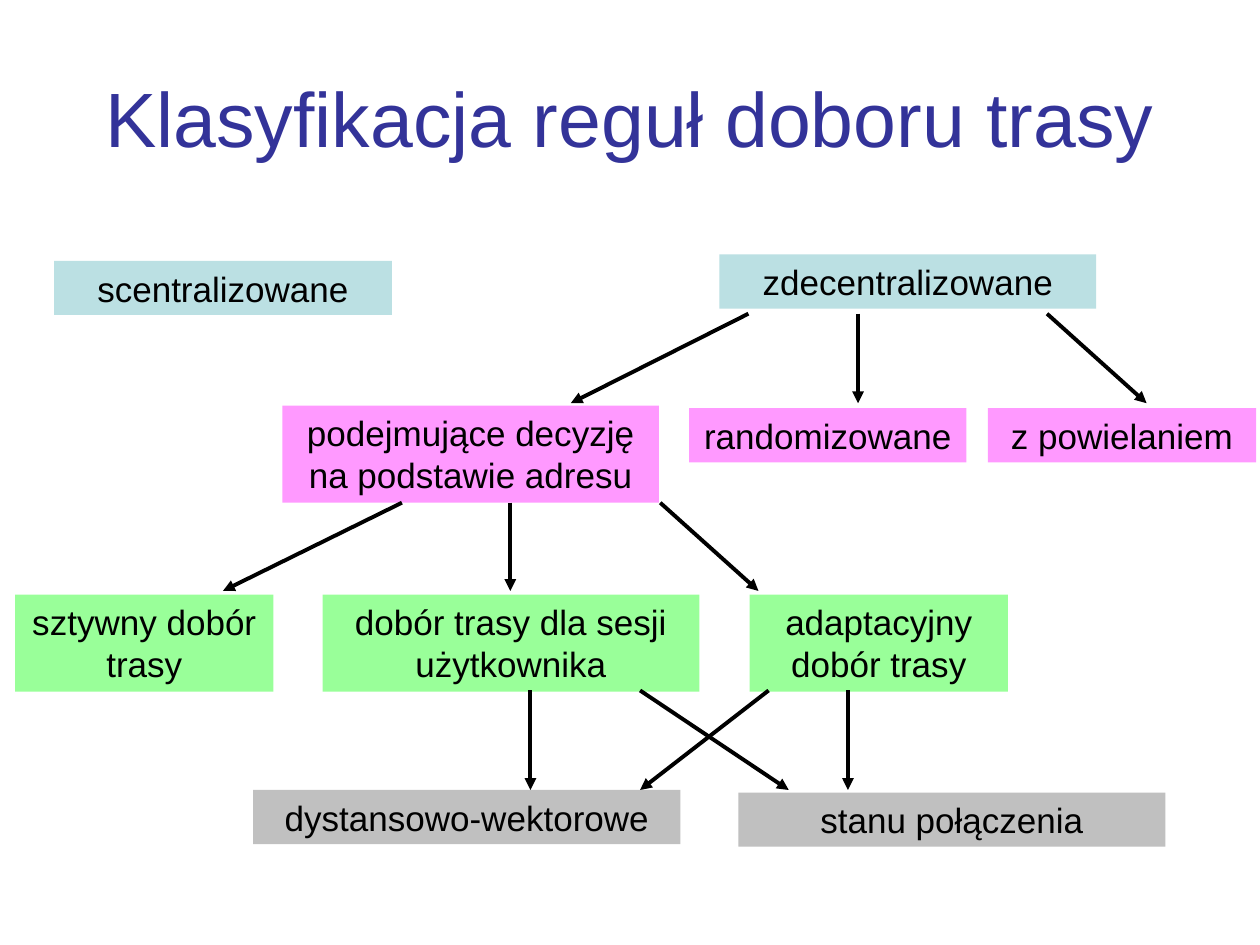
from lxml import etree
from pptx import Presentation
from pptx.dml.color import RGBColor
from pptx.enum.shapes import MSO_CONNECTOR, MSO_SHAPE
from pptx.enum.text import MSO_ANCHOR, MSO_AUTO_SIZE, PP_ALIGN
from pptx.oxml.ns import qn
from pptx.util import Inches, Pt

RECT = MSO_SHAPE.RECTANGLE
LINE = MSO_CONNECTOR.STRAIGHT
TOP, MIDDLE = MSO_ANCHOR.TOP, MSO_ANCHOR.MIDDLE
GROW, FIXED = MSO_AUTO_SIZE.SHAPE_TO_FIT_TEXT, MSO_AUTO_SIZE.NONE
CENTER = PP_ALIGN.CENTER

ONE, TWO = 0.43, 0.77  # box heights for one and two lines of text

# fill, box height, boxes: (left, top, width, text)
LEVELS = [
    ("BBE0E3", ONE, [(0.43, 2.07, 2.68, "scentralizowane"),
                     (5.71, 2.02, 2.99, "zdecentralizowane")]),
    ("FF99FF", TWO, [(2.24, 3.22, 2.99, "podejmujące decyzję na podstawie adresu")]),
    ("FF99FF", ONE, [(5.47, 3.24, 2.2, "randomizowane"),
                     (7.84, 3.24, 2.13, "z powielaniem")]),
    ("99FF99", TWO, [(0.12, 4.72, 2.05, "sztywny dobór trasy"),
                     (2.56, 4.72, 2.99, "dobór trasy dla sesji użytkownika"),
                     (5.95, 4.72, 2.05, "adaptacyjny dobór trasy")]),
    ("C0C0C0", ONE, [(2.01, 6.27, 3.39, "dystansowo-wektorowe"),
                     (5.86, 6.29, 3.39, "stanu połączenia")]),
]

# start y, end y, arrows: (start x, end x)
ARROWS = [
    (2.49, 3.2, [(5.94, 4.53), (8.31, 9.1), (6.81, 6.81)]),
    (3.99, 4.69, [(3.19, 1.77), (5.24, 6.02), (4.05, 4.05)]),
    (5.48, 6.27, [(4.21, 4.21), (5.08, 6.26), (6.73, 6.73), (6.1, 5.08)]),
]


def color(text):
    return RGBColor.from_string(text)


def write(shape, text, size, ink, anchor, fit):
    frame = shape.text_frame
    frame.text = text
    frame.word_wrap = True
    frame.auto_size = fit
    frame.vertical_anchor = anchor
    par = frame.paragraphs[0]
    par.alignment = CENTER
    font = par.runs[0].font
    font.name = "Arial"
    font.size = Pt(size)
    font.color.rgb = color(ink)


def add_title(slide, left, top, width, height, text):
    title = slide.shapes.title
    title.left, title.top = Inches(left), Inches(top)
    title.width, title.height = Inches(width), Inches(height)
    write(title, text, 44, "333399", MIDDLE, FIXED)


def add_box(slide, left, top, width, height, text, fill):
    box = slide.shapes.add_shape(
        RECT, Inches(left), Inches(top), Inches(width), Inches(height))
    box.shadow.inherit = False
    box.fill.solid()
    box.fill.fore_color.rgb = color(fill)
    box.line.fill.background()
    write(box, text, 20, "000000", TOP, GROW)


def add_arrow(slide, x1, y1, x2, y2):
    arrow = slide.shapes.add_connector(
        LINE, Inches(x1), Inches(y1), Inches(x2), Inches(y2))
    arrow.line.width = Pt(2.25)
    arrow.line.color.rgb = color("000000")
    etree.SubElement(arrow.line._get_or_add_ln(), qn("a:tailEnd"), type="triangle")
    etree.SubElement(arrow._element.spPr, qn("a:effectLst"))


def main():
    deck = Presentation()
    deck.slide_width, deck.slide_height = Inches(10), Inches(7.5)
    slide = deck.slides.add_slide(deck.slide_layouts[5])
    add_title(slide, 0.5, 0.3, 9, 1.25, "Klasyfikacja reguł doboru trasy")
    for fill, height, boxes in LEVELS:
        for left, top, width, text in boxes:
            add_box(slide, left, top, width, height, text, fill)
    for y1, y2, spans in ARROWS:
        for x1, x2 in spans:
            add_arrow(slide, x1, y1, x2, y2)
    deck.save("out.pptx")


if __name__ == "__main__":
    main()
